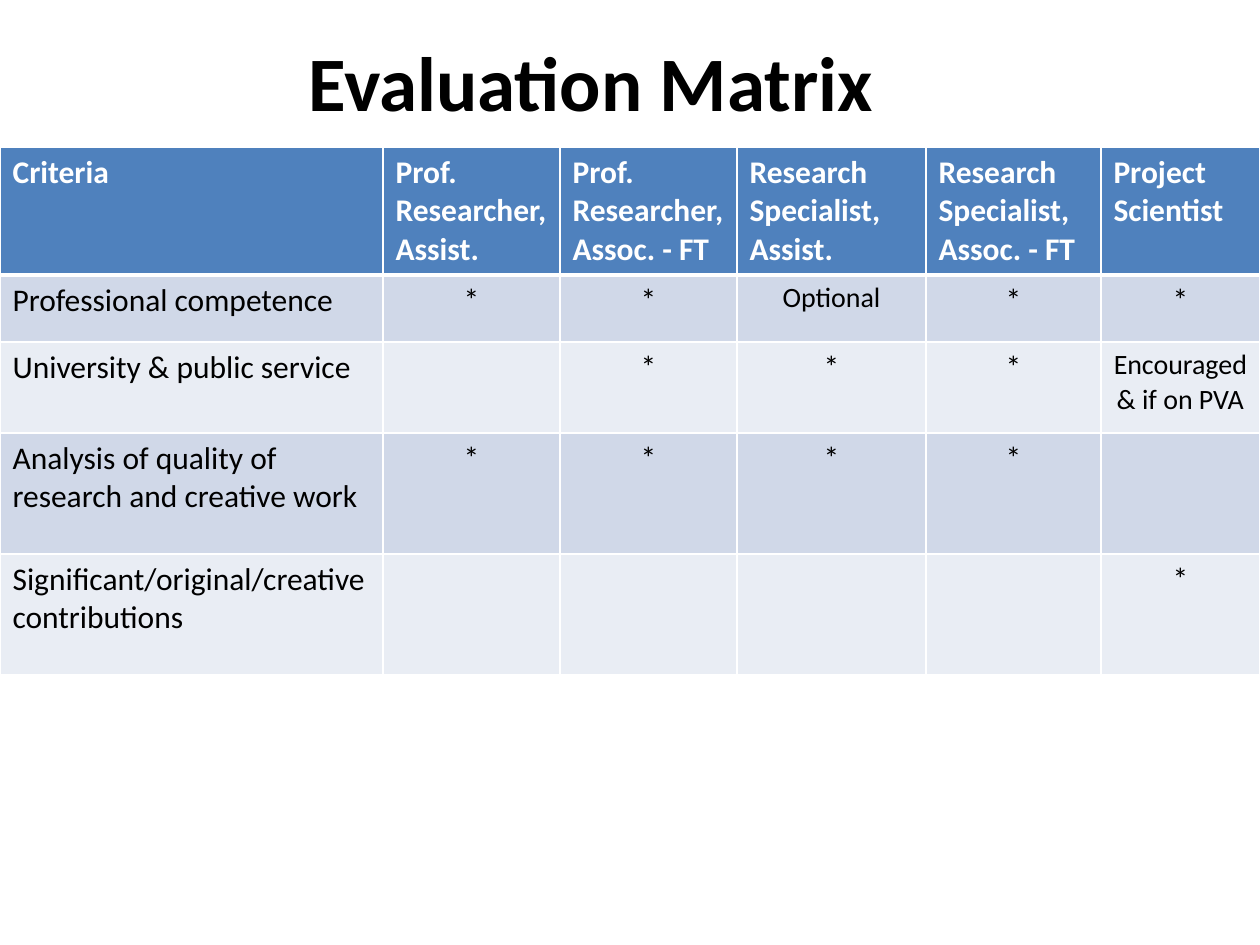
"""Build the Evaluation Matrix slide with its criteria table."""
import dataclasses

import lxml.etree
import pptx
import pptx.dml.color
import pptx.enum.text
import pptx.oxml.ns
import pptx.util


@dataclasses.dataclass(frozen=True)
class Theme:
    font: str = "Calibri"
    title_size: int = 44
    body_size: int = 18
    note_size: int = 16
    ink: str = "000000"
    paper: str = "FFFFFF"
    header: str = "4F81BD"
    bands: tuple = ("D0D8E8", "E9EDF4")
    rule: int = 1
    header_rule: int = 3


theme = Theme()
SCALE = 914400 / 126


def px(length):
    return pptx.util.Emu(round(length * SCALE))


def add_run(paragraph, text, size, color, bold):
    run = paragraph.add_run()
    run.text = text
    run.font.name = theme.font
    run.font.size = pptx.util.Pt(size)
    run.font.bold = bold
    run.font.color.rgb = pptx.dml.color.RGBColor.from_string(color)


column_widths = [383, 177, 177, 189, 175, 159]
row_heights = [121, 67, 91, 121, 121]
matrix = [
    ["Criteria", "Prof. Researcher, Assist.", "Prof. Researcher, Assoc. - FT",
     "Research Specialist, Assist.", "Research Specialist, Assoc. - FT", "Project Scientist"],
    ["Professional competence", "*", "*", "Optional", "*", "*"],
    ["University & public service", "", "*", "*", "*", "Encouraged & if on PVA"],
    ["Analysis of quality of research and creative work", "*", "*", "*", "*", ""],
    ["Significant/original/creative contributions", "", "", "", "", "*"],
]

presentation = pptx.Presentation()
presentation.slide_width, presentation.slide_height = px(1260), px(945)
slide = presentation.slides.add_slide(presentation.slide_layouts[5])

heading = slide.shapes.title
heading.left, heading.top, heading.width, heading.height = px(296), px(28), px(888), px(106)
heading.text_frame.word_wrap = True
heading.text_frame.vertical_anchor = pptx.enum.text.MSO_ANCHOR.MIDDLE
heading_line = heading.text_frame.paragraphs[0]
heading_line.alignment = pptx.enum.text.PP_ALIGN.LEFT
add_run(heading_line, "Evaluation Matrix", theme.title_size, theme.ink, True)

criteria = slide.shapes.add_table(
    len(row_heights), len(column_widths), 0, px(147),
    px(sum(column_widths)), px(sum(row_heights))).table
for column, width in zip(criteria.columns, column_widths):
    column.width = px(width)
for row, height in zip(criteria.rows, row_heights):
    row.height = px(height)

for row_index, entries in enumerate(matrix):
    is_header = row_index == 0
    fill = theme.header if is_header else theme.bands[(row_index - 1) % 2]
    top_rule = theme.header_rule if row_index == 1 else theme.rule
    bottom_rule = theme.header_rule if is_header else theme.rule
    for column_index, entry in enumerate(entries):
        cell = criteria.cell(row_index, column_index)
        properties = cell._tc.get_or_add_tcPr()
        for side, weight in (("L", theme.rule), ("R", theme.rule),
                             ("T", top_rule), ("B", bottom_rule)):
            border = lxml.etree.SubElement(
                properties, pptx.oxml.ns.qn(f"a:ln{side}"), w=str(pptx.util.Pt(weight)))
            border_fill = lxml.etree.SubElement(border, pptx.oxml.ns.qn("a:solidFill"))
            lxml.etree.SubElement(border_fill, pptx.oxml.ns.qn("a:srgbClr"), val=theme.paper)
        cell.fill.solid()
        cell.fill.fore_color.rgb = pptx.dml.color.RGBColor.from_string(fill)

        paragraph = cell.text_frame.paragraphs[0]
        is_rating = not is_header and column_index > 0
        if is_rating:
            paragraph.alignment = pptx.enum.text.PP_ALIGN.CENTER
        if entry:
            size = theme.note_size if is_rating and entry != "*" else theme.body_size
            add_run(paragraph, entry, size, theme.paper if is_header else theme.ink, is_header)

presentation.save("out.pptx")
